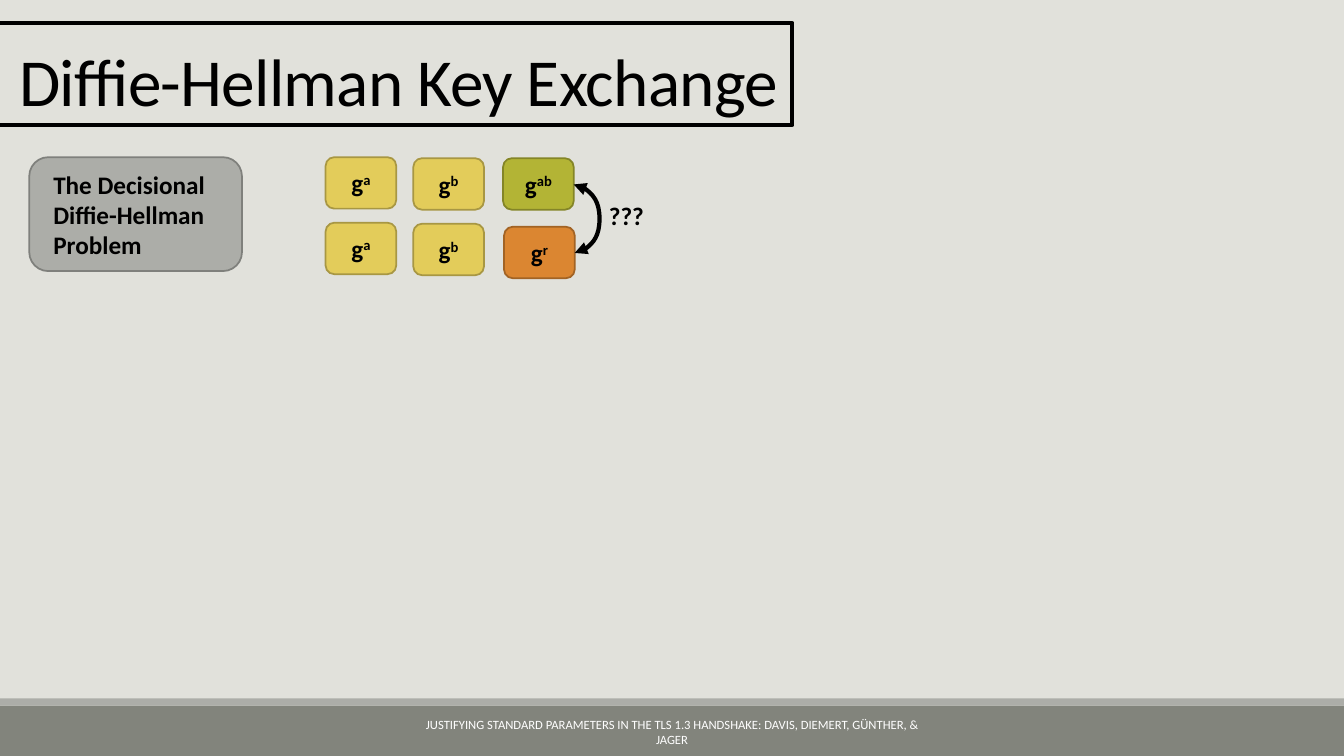
from dataclasses import dataclass

from lxml import etree
from pptx import Presentation
from pptx.dml.color import RGBColor
from pptx.enum.shapes import MSO_CONNECTOR, MSO_SHAPE
from pptx.enum.text import MSO_ANCHOR, PP_ALIGN
from pptx.oxml.ns import qn
from pptx.util import Inches, Pt

RECTANGLE = MSO_SHAPE.RECTANGLE
ROUNDED = MSO_SHAPE.ROUNDED_RECTANGLE
CURVE = MSO_CONNECTOR.CURVE
TOP, MIDDLE, BOTTOM = MSO_ANCHOR.TOP, MSO_ANCHOR.MIDDLE, MSO_ANCHOR.BOTTOM
LEFT, CENTER = PP_ALIGN.LEFT, PP_ALIGN.CENTER

FONT = "Calibri"
COLORS = {
    "background": "E1E1DB",
    "footer": "82847C",
    "gray": "ACADA8",
    "gray_edge": "7F807C",
    "yellow": "E3CC5A",
    "yellow_edge": "A89743",
    "green": "B3B435",
    "green_edge": "848527",
    "orange": "DB8631",
    "orange_edge": "A26324",
    "black": "000000",
    "white": "FFFFFF",
}
CARD_WIDTH, CARD_HEIGHT = 0.7, 0.51


@dataclass(frozen=True)
class Box:
    left: float
    top: float
    width: float
    height: float
    fill: str | None = None
    edge: str | None = None
    edge_width: float = 1.25
    kind: int = RECTANGLE


@dataclass(frozen=True)
class Label:
    left: float
    top: float
    width: float
    height: float
    text: str
    size: float = 18
    color: str = "black"
    bold: bool = True
    wrap: bool = True
    align: int = LEFT
    anchor: int = TOP


@dataclass(frozen=True)
class Card:
    left: float
    top: float
    exponent: str
    color: str


BARS = [
    Box(0, 7, 13.33, 0.5, "footer"),
    Box(0, 6.93, 13.33, 0.07, "gray"),
    Box(0.29, 1.56, 2.11, 1.13, "gray", "gray_edge", kind=ROUNDED),
]
TITLE_BOX = Box(-0.2, 0.23, 8.06, 1.01, edge="black", edge_width=3)
CARDS = [
    Card(3.23, 1.56, "a", "yellow"),
    Card(4.1, 1.57, "b", "yellow"),
    Card(3.23, 2.21, "a", "yellow"),
    Card(4.1, 2.22, "b", "yellow"),
    Card(5, 2.25, "r", "orange"),
    Card(4.99, 1.57, "ab", "green"),
]
LABELS = [
    Label(0.43, 1.63, 1.81, 1.01, "The Decisional Diffie-Hellman Problem"),
    Label(5.94, 1.94, 0.55, 0.4, "???", wrap=False),
    Label(4.03, 7.06, 5.27, 0.4,
          "JUSTIFYING STANDARD PARAMETERS IN THE TLS 1.3 HANDSHAKE: "
          "DAVIS, DIEMERT, GÜNTHER, & JAGER",
          size=9, color="white", bold=False, align=CENTER, anchor=MIDDLE),
]


def rgb(name: str) -> RGBColor:
    return RGBColor.from_string(COLORS[name])


def format_run(run, size: float, color: str, bold: bool) -> None:
    run.font.name = FONT
    run.font.size = Pt(size)
    run.font.bold = bold
    run.font.color.rgb = rgb(color)


def draw_box(slide, box: Box):
    shape = slide.shapes.add_shape(
        box.kind, Inches(box.left), Inches(box.top), Inches(box.width), Inches(box.height))
    shape.shadow.inherit = False
    if box.fill:
        shape.fill.solid()
        shape.fill.fore_color.rgb = rgb(box.fill)
    else:
        shape.fill.background()
    if box.edge:
        shape.line.color.rgb = rgb(box.edge)
        shape.line.width = Pt(box.edge_width)
    else:
        shape.line.fill.background()
    return shape


def draw_title(slide) -> None:
    text_frame = draw_box(slide, TITLE_BOX).text_frame
    text_frame.text = "Diffie-Hellman Key Exchange"
    text_frame.vertical_anchor = BOTTOM
    text_frame.margin_left = Inches(0.39)
    paragraph = text_frame.paragraphs[0]
    paragraph.alignment = LEFT
    paragraph.line_spacing = 0.85
    run = paragraph.runs[0]
    format_run(run, 48, "black", False)
    run._r.get_or_add_rPr().set("spc", "-50")


def draw_card(slide, card: Card) -> None:
    box = Box(card.left, card.top, CARD_WIDTH, CARD_HEIGHT,
              card.color, f"{card.color}_edge", kind=ROUNDED)
    text_frame = draw_box(slide, box).text_frame
    text_frame.text = "g"
    text_frame.vertical_anchor = MIDDLE
    paragraph = text_frame.paragraphs[0]
    paragraph.alignment = CENTER
    exponent = paragraph.add_run()
    exponent.text = card.exponent
    for run in paragraph.runs:
        format_run(run, 18, "black", True)
    exponent._r.get_or_add_rPr().set("baseline", "30000")


def draw_label(slide, label: Label) -> None:
    shape = slide.shapes.add_textbox(
        Inches(label.left), Inches(label.top), Inches(label.width), Inches(label.height))
    text_frame = shape.text_frame
    text_frame.text = label.text
    text_frame.word_wrap = label.wrap
    text_frame.vertical_anchor = label.anchor
    paragraph = text_frame.paragraphs[0]
    paragraph.alignment = label.align
    format_run(paragraph.runs[0], label.size, label.color, label.bold)


def draw_comparison_arrow(slide) -> None:
    connector = slide.shapes.add_connector(
        CURVE, Inches(5.69), Inches(1.83), Inches(5.7), Inches(2.51))
    connector.line.color.rgb = rgb("black")
    connector.line.width = Pt(3)
    properties = connector._element.spPr
    geometry = properties.find(qn("a:prstGeom"))
    adjustments = geometry.find(qn("a:avLst"))
    if adjustments is None:
        adjustments = etree.SubElement(geometry, qn("a:avLst"))
    etree.SubElement(adjustments, qn("a:gd"), name="adj1", fmla="val 2600000")
    line = properties.find(qn("a:ln"))
    for end in ("a:headEnd", "a:tailEnd"):
        etree.SubElement(line, qn(end), type="triangle")
    etree.SubElement(properties, qn("a:effectLst"))


def main() -> None:
    """Build the Diffie-Hellman slide and save it."""
    presentation = Presentation()
    presentation.slide_width = Inches(13.33)
    presentation.slide_height = Inches(7.5)
    slide = presentation.slides.add_slide(presentation.slide_layouts[6])
    slide.background.fill.solid()
    slide.background.fill.fore_color.rgb = rgb("background")
    for bar in BARS:
        draw_box(slide, bar)
    draw_title(slide)
    for card in CARDS:
        draw_card(slide, card)
    draw_comparison_arrow(slide)
    for label in LABELS:
        draw_label(slide, label)
    presentation.save("out.pptx")


if __name__ == "__main__":
    main()
